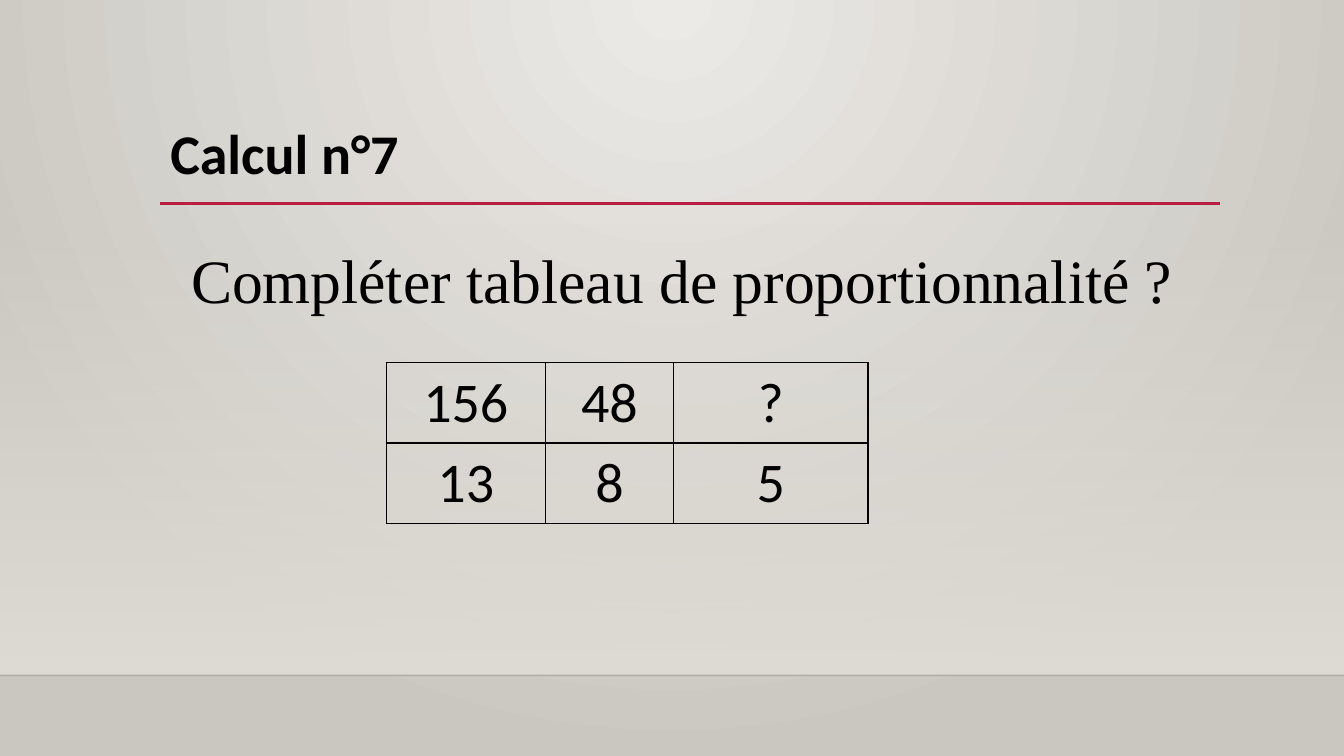
from lxml.etree import SubElement
from pptx import Presentation
from pptx.dml.color import RGBColor
from pptx.enum.shapes import MSO_CONNECTOR, MSO_SHAPE
from pptx.enum.text import MSO_ANCHOR, MSO_AUTO_SIZE, PP_ALIGN
from pptx.oxml import parse_xml
from pptx.oxml.ns import nsdecls, qn
from pptx.util import Inches, Pt

WIDTH, HEIGHT = 13.33, 7.5
FLOOR_TOP = 6.7
BLACK = RGBColor(0x00, 0x00, 0x00)
FLOOR_LINE = RGBColor(0x00, 0x00, 0x01)
CRIMSON = RGBColor(0xB7, 0x1E, 0x42)
LIGHT = RGBColor(0xEC, 0xEA, 0xE7)
GREY = RGBColor(0xCA, 0xC7, 0xC1)
HAZE = RGBColor(0xDF, 0xDB, 0xD5)
VALUES = [["156", "48", "?"], ["13", "8", "5"]]
COLUMN_WIDTHS = [1.58, 1.27, 1.93]


def set_gradient(fill, element, stops, direction):
    """Fill with (position, colour, opacity) stops, all in percent."""
    fill.solid()
    solid = next(element.iter(qn("a:solidFill")))
    marks = "".join(
        f'<a:gs pos="{position * 1000}"><a:srgbClr val="{color}">'
        f'<a:alpha val="{opacity * 1000}"/></a:srgbClr></a:gs>'
        for position, color, opacity in stops)
    gradient = parse_xml(f'<a:gradFill {nsdecls("a")} rotWithShape="1">'
                         f'<a:gsLst>{marks}</a:gsLst>{direction}</a:gradFill>')
    solid.getparent().replace(solid, gradient)


def add_rule(slide, left, right, top, color, weight, opacity=100):
    rule = slide.shapes.add_connector(
        MSO_CONNECTOR.STRAIGHT, Inches(left), Inches(top), Inches(right), Inches(top))
    rule.line.color.rgb = color
    rule.line.width = Pt(weight)
    properties = rule._element.spPr
    if opacity < 100:
        SubElement(next(properties.iter(qn("a:srgbClr"))), qn("a:alpha"),
                   val=str(opacity * 1000))
    SubElement(properties, qn("a:effectLst"))


def write(frame, text, size=40, font="Calibri", bold=False,
          align=PP_ALIGN.LEFT, spacing=None):
    para = frame.paragraphs[0]
    para.alignment = align
    para.line_spacing = spacing
    span = para.add_run()
    span.text = text
    span.font.name = font
    span.font.size = Pt(size)
    span.font.bold = bold
    span.font.color.rgb = BLACK


def add_backdrop(slide):
    set_gradient(slide.background.fill, slide.element,
                 [(0, LIGHT, 100), (100, GREY, 100)],
                 '<a:path path="circle"><a:fillToRect l="43000" t="0" '
                 'r="43000" b="100000"/></a:path>')
    haze_top = 2.21
    haze = slide.shapes.add_shape(
        MSO_SHAPE.RECTANGLE, 0, Inches(haze_top), Inches(WIDTH), Inches(FLOOR_TOP - haze_top))
    haze.shadow.inherit = False
    haze.line.fill.background()
    set_gradient(haze.fill, haze._element, [(0, HAZE, 0), (100, HAZE, 100)],
                 '<a:lin ang="5400000" scaled="0"/>')
    add_rule(slide, 0, WIDTH, FLOOR_TOP, FLOOR_LINE, 1, opacity=20)


def add_title(slide, text, left, top, width, height):
    box = slide.shapes.add_textbox(Inches(left), Inches(top), Inches(2.92), Inches(height))
    box.text_frame.word_wrap = False
    box.text_frame.auto_size = MSO_AUTO_SIZE.SHAPE_TO_FIT_TEXT
    write(box.text_frame, text, bold=True)
    add_rule(slide, left, left + width, top + height + 0.12, CRIMSON, 2.5)


def add_question(slide, text, left, top, width, height):
    box = slide.shapes.add_textbox(Inches(left), Inches(top), Inches(width), Inches(height))
    box.text_frame.word_wrap = True
    write(box.text_frame, text, size=44, font="Times New Roman",
          align=PP_ALIGN.CENTER, spacing=1.2)


def add_borders(cell):
    properties = cell._tc.get_or_add_tcPr()
    for index, side in enumerate(("lnL", "lnR", "lnT", "lnB")):
        properties.insert(index, parse_xml(
            f'<a:{side} {nsdecls("a")} w="{Pt(1)}"><a:solidFill>'
            f'<a:srgbClr val="{BLACK}"/></a:solidFill></a:{side}>'))


def add_proportion_table(slide, values, left, top, height):
    table = slide.shapes.add_table(
        len(values), len(COLUMN_WIDTHS), Inches(left), Inches(top),
        Inches(sum(COLUMN_WIDTHS)), Inches(height)).table
    table.first_row = table.horz_banding = False
    for column, width in zip(table.columns, COLUMN_WIDTHS):
        column.width = Inches(width)
    for row, texts in zip(table.rows, values):
        for cell, text in zip(row.cells, texts):
            cell.fill.background()
            cell.vertical_anchor = MSO_ANCHOR.MIDDLE
            add_borders(cell)
            write(cell.text_frame, text, align=PP_ALIGN.CENTER)


def main():
    deck = Presentation()
    deck.slide_width, deck.slide_height = Inches(WIDTH), Inches(HEIGHT)
    page = deck.slides.add_slide(deck.slide_layouts[6])
    add_backdrop(page)
    add_title(page, "Calcul n°7", 1.59, 1.13, 10.51, 0.77)
    add_question(page, "Compléter tableau de proportionnalité ?", 0.53, 2.2, 12.48, 3.77)
    add_proportion_table(page, VALUES, 3.83, 3.6, 1.59)
    deck.save("out.pptx")


if __name__ == "__main__":
    main()
